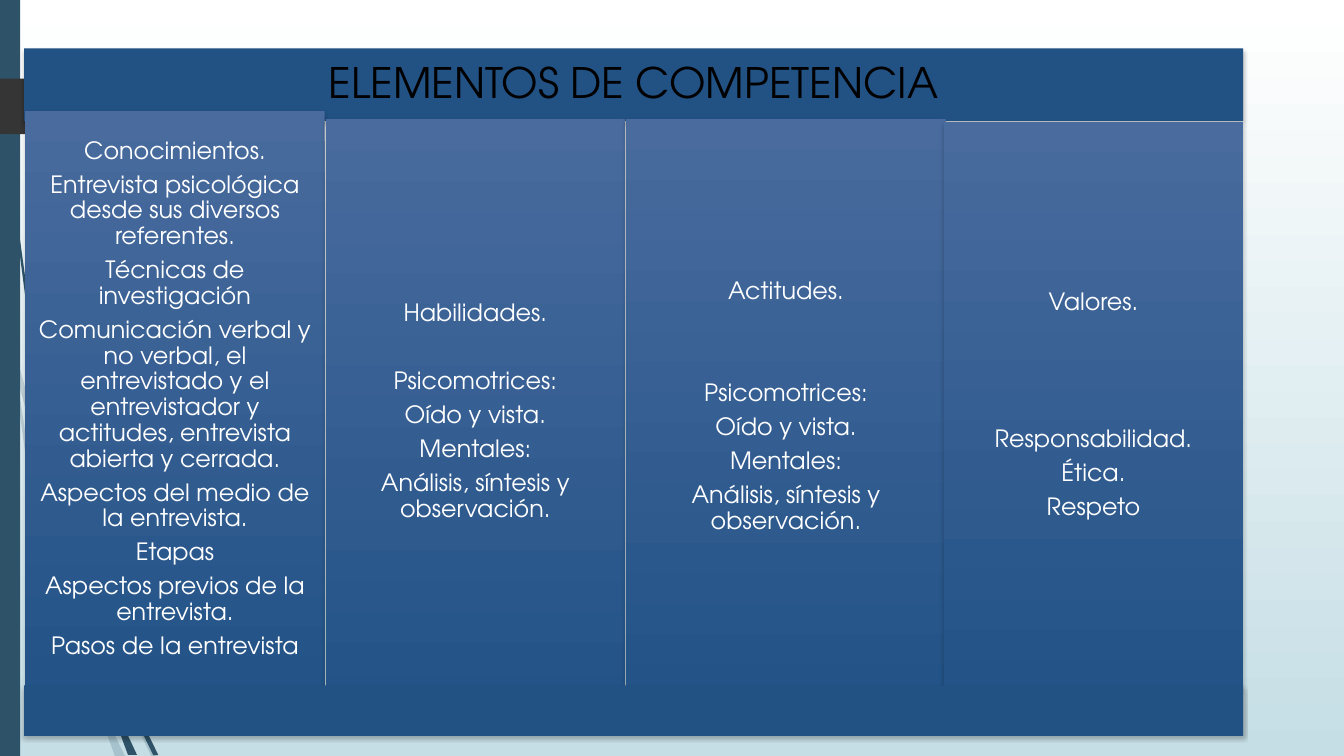
from lxml import etree
from pptx import Presentation
from pptx import util as u
from pptx.dml.color import RGBColor
from pptx.enum import shapes, text
from pptx.oxml import ns

FONT = "TeX Gyre Adventor"
NAVY, TEAL, CHARCOAL = "225184", "2E5369", "353535"
PANEL_SHADES = ("496B9E", "235387")
SKY_SHADES = ("FFFFFF", "C5DEE5")


def color(value):
    return RGBColor.from_string(value)


class Board:
    def __init__(self, deck):
        self.width, self.height = deck.slide_width, deck.slide_height
        self.slide = deck.slides.add_slide(deck.slide_layouts[5])
        self.shade(self.slide.background.fill, SKY_SHADES)

    def x(self, percent):
        return round(self.width * percent / 100)

    def y(self, percent):
        return round(self.height * percent / 100)

    def box(self, left, top, width, height):
        return self.x(left), self.y(top), self.x(width), self.y(height)

    def shade(self, fill, shades):
        fill.gradient()
        fill.gradient_angle = 270
        for stop, value in zip(fill.gradient_stops, shades):
            stop.color.rgb = color(value)

    def paint(self, shape, fill, raised=False):
        if isinstance(fill, tuple):
            self.shade(shape.fill, fill)
        else:
            shape.fill.solid()
            shape.fill.fore_color.rgb = color(fill)
        shape.line.fill.background()
        shape.shadow.inherit = False
        if raised:
            effects = shape.element.find(".//" + ns.qn("a:effectLst"))
            shadow = etree.SubElement(effects, ns.qn("a:outerShdw"), blurRad=str(u.Pt(3)),
                                      dist=str(u.Pt(2)), dir="5400000", rotWithShape="0")
            black = etree.SubElement(shadow, ns.qn("a:srgbClr"), val="000000")
            etree.SubElement(black, ns.qn("a:alpha"), val="25000")

    def bar(self, area, fill, raised=True):
        shape = self.slide.shapes.add_shape(shapes.MSO_SHAPE.RECTANGLE, *self.box(*area))
        self.paint(shape, fill, raised)
        return shape

    def outline(self, points, fill, opacity=100):
        corners = [(self.x(across), self.y(down)) for across, down in points]
        builder = self.slide.shapes.build_freeform(*corners[0])
        builder.add_line_segments(corners[1:])
        shape = builder.convert_to_shape()
        self.paint(shape, fill)
        if opacity < 100:
            tint = shape.element.spPr.find(".//" + ns.qn("a:srgbClr"))
            etree.SubElement(tint, ns.qn("a:alpha"), val=str(opacity * 1000))

    def letter(self, shape, lines, size, ink, inset):
        frame = shape.text_frame
        frame.text = "\n".join(lines)
        frame.word_wrap = True
        frame.auto_size = text.MSO_AUTO_SIZE.NONE
        frame.vertical_anchor = text.MSO_ANCHOR.MIDDLE
        frame.margin_left = frame.margin_right = u.Inches(inset)
        frame.margin_top = frame.margin_bottom = u.Inches(inset)
        for paragraph in frame.paragraphs:
            paragraph.alignment = text.PP_ALIGN.CENTER
            paragraph.line_spacing = 0.9
            paragraph.space_after = u.Pt(size * 0.35)
            paragraph.font.size = u.Pt(size)
            paragraph.font.name = FONT
            paragraph.font.color.rgb = color(ink)
        return frame.paragraphs

    def title(self, area, words):
        heading = self.slide.shapes.title
        heading.element.getparent().append(heading.element)
        heading.left, heading.top, heading.width, heading.height = self.box(*area)
        self.paint(heading, NAVY, raised=True)
        self.letter(heading, [words], 30, "000000", 0.12)

    def panel(self, area, lines, skipped_lines):
        panel = self.bar(area, PANEL_SHADES)
        heading = self.letter(panel, lines, 17, "FFFFFF", 0.07)[0]
        heading.space_after = u.Pt(6 + 24.4 * skipped_lines)


PALE_STRANDS = [
    [(1.05, 46), (1.28, 50.13), (4.35, 69.6), (6.3, 79.87), (6.38, 78.13), (4.65, 69.33)],
    [(0.83, 46.67), (2.1, 62.67), (4.88, 82.8), (7.58, 95.2), (6.98, 91.07),
     (5.25, 82.53), (2.33, 62.53), (1.28, 50.13)],
    [(6.6, 79.47), (6.6, 81.33), (9.23, 92.53), (11.25, 100), (11.63, 100),
     (9.53, 92.27), (6.9, 80.93)],
    [(6.98, 91.07), (7.58, 95.2), (8.55, 100), (9.3, 100), (7.88, 94.8)],
]
DARK_STRANDS = [
    [(0.23, 0), (0.53, 14.67), (1.28, 31.07), (2.48, 47.33), (4.28, 64.13),
     (4.13, 60.4), (2.7, 47.33), (1.43, 30.93), (0.6, 14.53), (0.3, 0)],
    [(8.25, 85.47), (8.33, 87.47), (9.9, 94.4), (11.4, 99.87), (11.78, 99.87),
     (10.2, 94.13), (8.48, 86.53)],
    [(8.25, 92.13), (8.78, 96.27), (9.53, 99.87), (10.2, 99.87), (9.15, 95.87), (8.7, 94.13)],
]
PAGE_ARROW = [(0, 10.4), (10.95, 10.4), (11.1, 10.5), (13.05, 14.13),
              (11.1, 17.73), (10.95, 17.83), (0, 17.73)]

SKILLS = ["Psicomotrices:", "Oído y vista.", "Mentales:", "Análisis, síntesis y observación."]
PANELS = [
    ((1.88, 14.67, 22.28, 76.27), 0, [
        "Conocimientos.",
        "Entrevista psicológica desde sus diversos referentes.",
        "Técnicas de investigación",
        "Comunicación verbal y no verbal, el entrevistado y el entrevistador y actitudes, "
        "entrevista abierta y cerrada.",
        "Aspectos del medio de la entrevista.",
        "Etapas",
        "Aspectos previos de la entrevista.",
        "Pasos de la entrevista"]),
    ((24.23, 15.73, 22.28, 77.47), 1, ["Habilidades."] + SKILLS),
    ((46.59, 15.73, 23.78, 76.13), 2, ["Actitudes."] + SKILLS),
    ((70.22, 16.13, 22.28, 74.93), 3, ["Valores.", "Responsabilidad.", "Ética.", "Respeto"]),
]


def main():
    deck = Presentation()
    deck.slide_width, deck.slide_height = u.Inches(13.33), u.Inches(7.5)
    board = Board(deck)
    for strand in PALE_STRANDS:
        board.outline(strand, TEAL, opacity=20)
    for strand in DARK_STRANDS:
        board.outline(strand, TEAL)
    board.bar((0, 0, 1.5, 100), TEAL, raised=False)
    board.outline(PAGE_ARROW, CHARCOAL)
    board.title((1.8, 6.4, 90.7, 9.6), "ELEMENTOS DE COMPETENCIA")
    for area, skipped_lines, lines in PANELS:
        board.panel(area, lines, skipped_lines)
    board.bar((1.8, 90.67, 90.7, 6.67), NAVY)
    deck.save("out.pptx")


if __name__ == "__main__":
    main()
